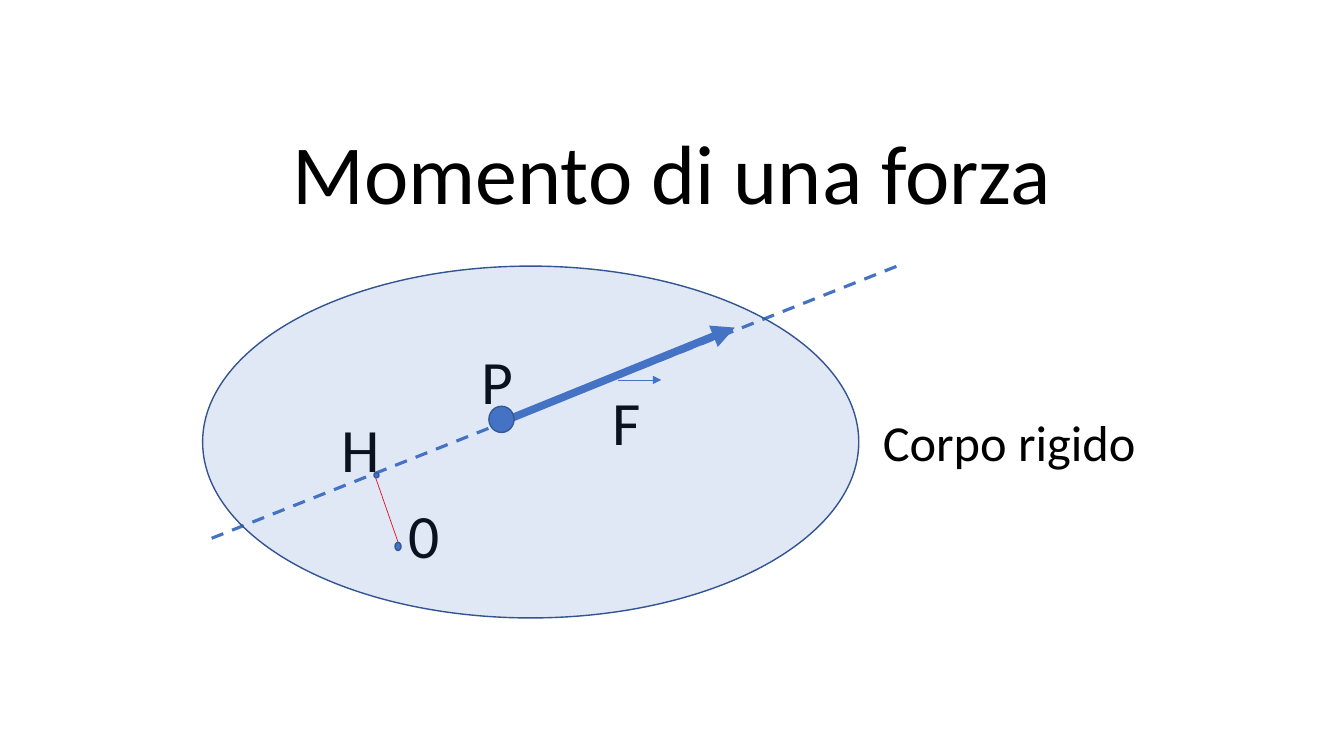
from pptx import Presentation
from pptx.dml.color import RGBColor
from pptx.enum.dml import MSO_LINE
from pptx.enum.shapes import MSO_CONNECTOR, MSO_SHAPE
from pptx.enum.text import MSO_ANCHOR, MSO_AUTO_SIZE, PP_ALIGN
from pptx.oxml.ns import qn
from pptx.util import Pt
from lxml.etree import SubElement

TITLE = "Momento di una forza"
FONT = "Calibri"
BLUE, OUTLINE, RED, BLACK = "4472C4", "325491", "FF0000", "000000"

LINES = [
    {"start": (357.8, 301.7), "end": (524.9, 234), "color": BLUE, "width": 5.5, "arrow": True},
    {"start": (151.2, 384.5), "end": (640.8, 190.1), "color": BLUE, "width": 2.25, "dashed": True},
    {"start": (284.4, 387.4), "end": (267.1, 337.7), "color": RED, "width": 0.5},
    {"start": (441.4, 271.4), "end": (472.3, 271.4), "color": BLUE, "width": 0.5, "arrow": True},
]
POINTS = [
    (282.2, 387.4, 4.3, 5.8),
    (267.1, 337.7, 3.6, 3.6),
    (349.2, 290.2, 18, 18.7),
]
LABEL_SIZE = (42.5, 60.5)
LABELS = [("H", 236.9, 290.2), ("P", 337, 241.2), ("0", 284.4, 351.4), ("F", 430.6, 270.7)]
BODY = (144.7, 190.1, 468.7, 251.3)
BODY_OPACITY = 16
CAPTION = ("Corpo rigido", (623.5, 290.2, 206.6, 51.1))


def rgb(color):
    return RGBColor.from_string(color)


def points(values):
    return [Pt(value) for value in values]


def format_paragraph(paragraph, size):
    paragraph.font.name = FONT
    paragraph.font.size = Pt(size)
    paragraph.font.color.rgb = rgb(BLACK)


def add_line(slide, start, end, color, width, dashed=False, arrow=False):
    connector = slide.shapes.add_connector(MSO_CONNECTOR.STRAIGHT, *points(start + end))
    connector.line.color.rgb = rgb(color)
    connector.line.width = Pt(width)
    if dashed:
        connector.line.dash_style = MSO_LINE.DASH
    if arrow:
        SubElement(connector.line._get_or_add_ln(), qn("a:tailEnd"), type="triangle")
    SubElement(connector._element.spPr, qn("a:effectLst"))


def add_ellipse(slide, box, opacity=100):
    shape = slide.shapes.add_shape(MSO_SHAPE.OVAL, *points(box))
    shape.shadow.inherit = False
    shape.fill.solid()
    shape.fill.fore_color.rgb = rgb(BLUE)
    shape.line.color.rgb = rgb(OUTLINE)
    shape.line.width = Pt(1)
    if opacity < 100:
        color = shape._element.spPr.find(qn("a:solidFill")).find(qn("a:srgbClr"))
        SubElement(color, qn("a:alpha"), val=str(opacity * 1000))


def add_text(slide, text, box, size):
    frame = slide.shapes.add_textbox(*points(box)).text_frame
    frame.word_wrap = True
    frame.auto_size = MSO_AUTO_SIZE.SHAPE_TO_FIT_TEXT
    frame.text = text
    format_paragraph(frame.paragraphs[0], size)


def add_title(slide):
    title = slide.shapes.title
    title.left, title.top, title.width, title.height = points((120, 88.6, 720, 74.2))
    frame = title.text_frame
    frame.text = TITLE
    frame.vertical_anchor = MSO_ANCHOR.BOTTOM
    frame.auto_size = MSO_AUTO_SIZE.NONE
    paragraph = frame.paragraphs[0]
    paragraph.alignment = PP_ALIGN.CENTER
    paragraph.line_spacing = 0.9
    format_paragraph(paragraph, 60)


def main():
    presentation = Presentation()
    presentation.slide_width, presentation.slide_height = points((960, 540))
    slide = presentation.slides.add_slide(presentation.slide_layouts[5])
    add_title(slide)
    for line in LINES:
        add_line(slide, **line)
    for box in POINTS:
        add_ellipse(slide, box)
    for text, left, top in LABELS:
        add_text(slide, text, (left, top) + LABEL_SIZE, 44)
    add_ellipse(slide, BODY, BODY_OPACITY)
    add_text(slide, *CAPTION, 36)
    presentation.save("out.pptx")


if __name__ == "__main__":
    main()
